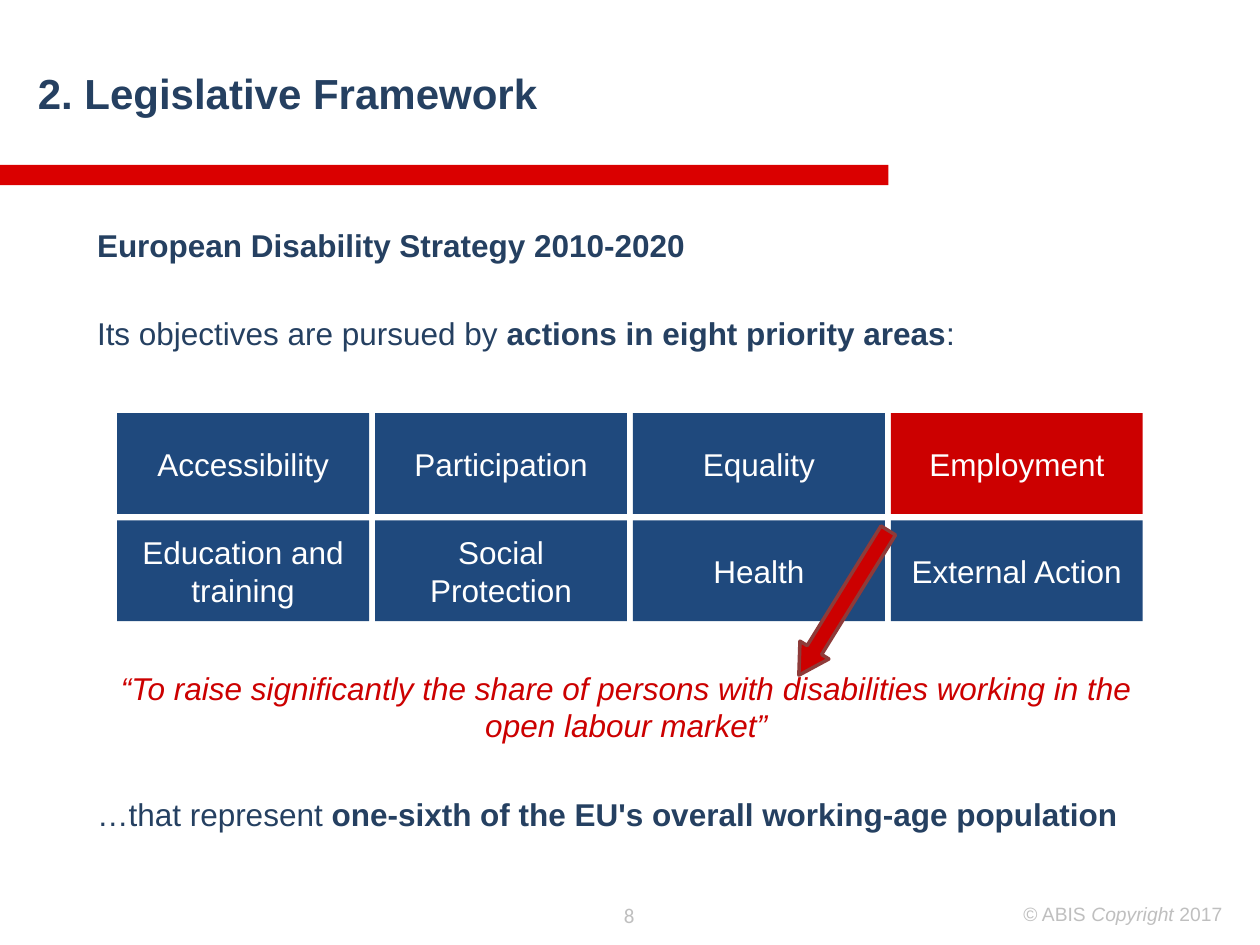
from pptx import Presentation
from pptx.dml.color import RGBColor
from pptx.enum.shapes import MSO_SHAPE as Shape
from pptx.enum.text import MSO_ANCHOR as Anchor, MSO_AUTO_SIZE as AutoSize, PP_ALIGN as Align
from pptx.oxml.ns import qn
from pptx.util import Emu, Pt

PX = 9144  # 100 px to the inch
NAVY, BLUE, RED, BAR_RED = "254061", "1F497D", "CC0000", "DA0000"
WHITE, GREY, ARROW_EDGE = "FFFFFF", "BFBFBF", "8E3B39"

AREAS = [
    ["Accessibility", "Participation", "Equality", "Employment"],
    ["Education and training", "Social Protection", "Health", "External Action"],
]
HIGHLIGHT = "Employment"

# Each paragraph: space before in points, alignment, runs of (text, format)
STRATEGY = [
    (0, Align.LEFT, [("European Disability Strategy 2010-2020", {"bold": True})]),
    (29, Align.LEFT, [("Its objectives are pursued by ", {}),
                      ("actions in eight priority areas", {"bold": True}),
                      (":", {})]),
    (181, Align.CENTER, [("“To raise significantly the share of persons with disabilities "
                          "working in the open labour market”",
                          {"italic": True, "color": RED})]),
    (29, Align.LEFT, [("…that represent ", {}),
                      ("one-sixth of the EU's overall working-age population",
                       {"bold": True})]),
]


def px(*lengths):
    return [Emu(round(length * PX)) for length in lengths]


def rgb(color):
    return RGBColor.from_string(color)


def place(shape, box):
    for side, length in zip(("left", "top", "width", "height"), px(*box)):
        setattr(shape, side, length)


def add_run(paragraph, text, size, color, name="Arial", bold=False, italic=False):
    run = paragraph.add_run()
    run.text = text
    look = {"name": name, "size": Pt(size), "bold": bold, "italic": italic}
    for attribute, value in look.items():
        setattr(run.font, attribute, value)
    run.font.color.rgb = rgb(color)


def set_frame(frame, anchor):
    look = {"word_wrap": True, "auto_size": AutoSize.NONE, "vertical_anchor": anchor}
    for attribute, value in look.items():
        setattr(frame, attribute, value)


def add_block(shapes, kind, box, fill):
    block = shapes.add_shape(kind, *px(*box))
    block.shadow.inherit = False
    block.fill.solid()
    block.fill.fore_color.rgb = rgb(fill)
    block.line.fill.background()
    return block


def fill_header(slide, box):
    left, top, width, height = box
    title = slide.shapes.title
    place(title, (left + 20, top, width - 20, height))
    set_frame(title.text_frame, Anchor.MIDDLE)
    heading = title.text_frame.paragraphs[0]
    heading.alignment = Align.LEFT
    add_run(heading, "2. Legislative Framework", 24, NAVY, bold=True)
    # Red rule under the title
    add_block(slide.shapes, Shape.RECTANGLE, (left, top + 131, 705, 16), BAR_RED)


def fill_strategy(slide, box):
    body = slide.placeholders[1]
    place(body, box)
    frame = body.text_frame
    set_frame(frame, Anchor.TOP)
    for index, (space, alignment, runs) in enumerate(STRATEGY):
        paragraph = frame.add_paragraph() if index else frame.paragraphs[0]
        paragraph.alignment = alignment
        paragraph.space_before = Pt(space)
        # No bullet, no hanging indent
        properties = paragraph._p.get_or_add_pPr()
        properties.set("marL", "0")
        properties.set("indent", "0")
        properties.append(properties.makeelement(qn("a:buNone"), {}))
        for text, look in runs:
            add_run(paragraph, text, 18, **{"color": NAVY, **look})


def add_areas(slide, box):
    left, top, width, height = box
    cell_width, cell_height = 200, 80
    step_x = (width - cell_width) / (len(AREAS[0]) - 1)
    step_y = (height - cell_height) / (len(AREAS) - 1)
    grid = slide.shapes.add_group_shape()
    for row, names in enumerate(AREAS):
        for column, name in enumerate(names):
            cell_box = (left + column * step_x, top + row * step_y, cell_width, cell_height)
            cell = add_block(grid.shapes, Shape.RECTANGLE, cell_box,
                             RED if name == HIGHLIGHT else BLUE)
            set_frame(cell.text_frame, Anchor.MIDDLE)
            label = cell.text_frame.paragraphs[0]
            label.alignment = Align.CENTER
            add_run(label, name, 18, WHITE)


def add_goal_arrow(slide, box):
    arrow = add_block(slide.shapes, Shape.LEFT_ARROW, box, RED)
    arrow.rotation = 301.7
    arrow.adjustments[0] = 0.5
    arrow.adjustments[1] = 0.87
    arrow.line.color.rgb = rgb(ARROW_EDGE)
    arrow.line.width = Pt(2)


def add_note(slide, box, alignment, anchor, runs, **look):
    note = slide.shapes.add_textbox(*px(*box))
    set_frame(note.text_frame, anchor)
    paragraph = note.text_frame.paragraphs[0]
    paragraph.alignment = alignment
    for text, italic in runs:
        add_run(paragraph, text, color=GREY, italic=italic, **look)


def add_footer(slide, box):
    left, top, width, height = box
    add_note(slide, (left + 383, top, 233, height), Align.CENTER, Anchor.MIDDLE,
             [("8", False)], size=12, name="Calibri")
    add_note(slide, (left + width - 209, top + 5, 189, 29), Align.RIGHT, Anchor.TOP,
             [("© ABIS ", False), ("Copyright", True), (" 2017", False)], size=11)


def main():
    deck = Presentation()
    deck.slide_width, deck.slide_height = px(1000, 750)
    slide = deck.slides.add_slide(deck.slide_layouts[1])
    fill_header(slide, (0, 0, 855, 147))
    fill_strategy(slide, (67, 174, 860, 516))
    add_areas(slide, (93, 328, 814, 165))
    add_goal_arrow(slide, (602, 465, 135, 27))
    add_footer(slide, (0, 706, 1000, 40))
    deck.save("out.pptx")


if __name__ == "__main__":
    main()
